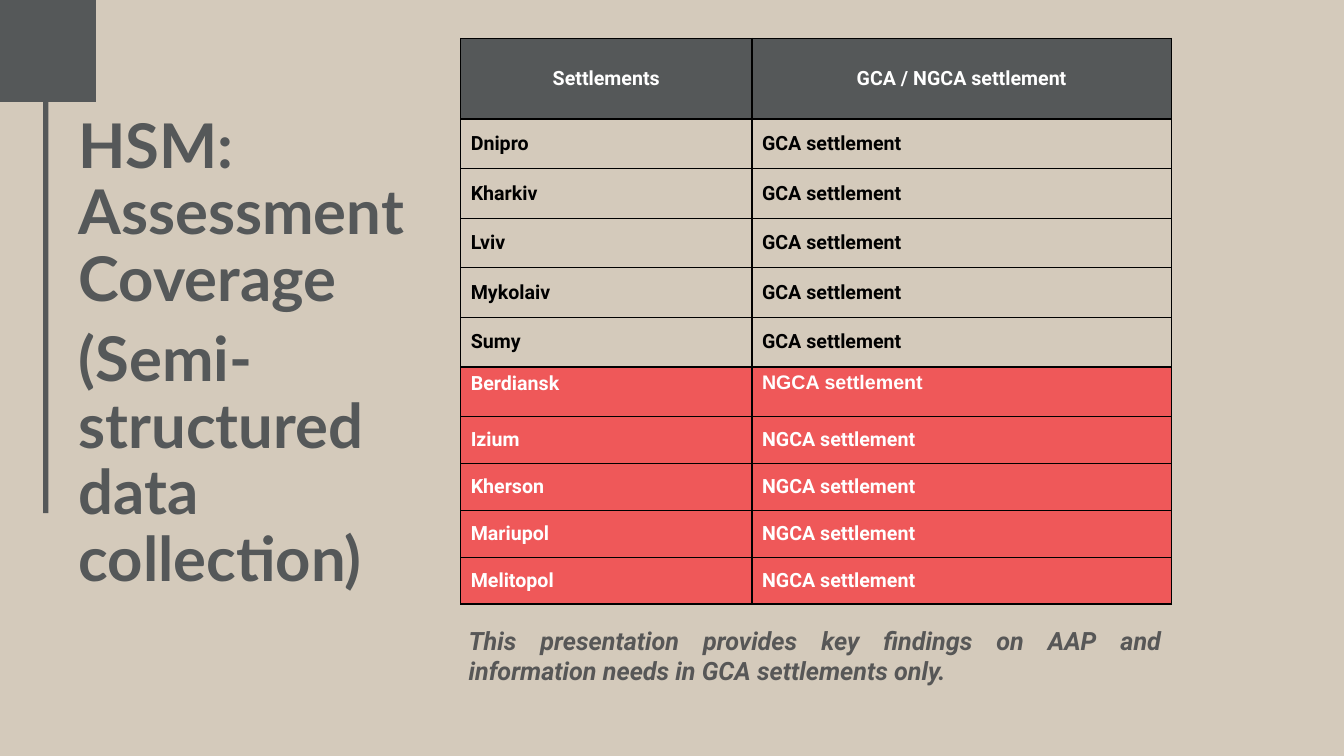
from dataclasses import dataclass

import lxml.etree
import pptx
import pptx.dml.color
import pptx.enum.shapes
import pptx.enum.text
import pptx.oxml.ns
import pptx.util

Cm = pptx.util.Cm
Pt = pptx.util.Pt
PP_ALIGN = pptx.enum.text.PP_ALIGN
MSO_ANCHOR = pptx.enum.text.MSO_ANCHOR

COLORS = {
    "sand": "D4CABB",
    "slate": "555859",
    "red": "EF5859",
    "note": "575757",
    "black": "000000",
    "white": "FFFFFF",
}


@dataclass
class Block:
    left: float
    top: float
    width: float
    height: float


@dataclass
class Style:
    size: float
    font: str
    color: str
    italic: bool = False


@dataclass
class Row:
    texts: tuple[str, str]
    height: float
    fill: str
    color: str
    align: PP_ALIGN = PP_ALIGN.LEFT
    anchor: MSO_ANCHOR = MSO_ANCHOR.MIDDLE
    fonts: tuple[str, str] = ("Roboto", "Roboto")


def rgb(name: str) -> pptx.dml.color.RGBColor:
    return pptx.dml.color.RGBColor.from_string(COLORS[name])


def add_run(p, text: str, style: Style) -> None:
    r = p.add_run()
    r.text = text
    r.font.size = Pt(style.size)
    r.font.name = style.font
    r.font.bold = True
    r.font.italic = style.italic
    r.font.color.rgb = rgb(style.color)


def add_block(s, block: Block) -> None:
    sp = s.shapes.add_shape(
        pptx.enum.shapes.MSO_SHAPE.RECTANGLE,
        Cm(block.left), Cm(block.top), Cm(block.width), Cm(block.height))
    sp.shadow.inherit = False
    sp.fill.solid()
    sp.fill.fore_color.rgb = rgb("slate")
    sp.line.fill.background()


def add_text(s, block: Block, texts: list[str], style: Style, align: PP_ALIGN,
             line_spacing: float = 1.0, gap: float = 0) -> None:
    tf = s.shapes.add_textbox(
        Cm(block.left), Cm(block.top), Cm(block.width), Cm(block.height)).text_frame
    tf.word_wrap = True
    for i, text in enumerate(texts):
        p = tf.add_paragraph() if i else tf.paragraphs[0]
        p.alignment = align
        p.line_spacing = line_spacing
        if i:
            p.space_before = Pt(gap)
        add_run(p, text, style)


def set_borders(cell, color: str, width: float) -> None:
    tc_pr = cell._tc.get_or_add_tcPr()
    qn = pptx.oxml.ns.qn
    for i, side in enumerate(("a:lnL", "a:lnR", "a:lnT", "a:lnB")):
        ln = lxml.etree.Element(qn(side), w=str(Pt(width)))
        fill = lxml.etree.SubElement(ln, qn("a:solidFill"))
        lxml.etree.SubElement(fill, qn("a:srgbClr"), val=COLORS[color])
        tc_pr.insert(i, ln)


def add_table(s, block: Block, col_widths: list[float], rows: list[Row]) -> None:
    table = s.shapes.add_table(
        len(rows), len(col_widths),
        Cm(block.left), Cm(block.top), Cm(block.width), Cm(block.height)).table
    for col, width in zip(table.columns, col_widths):
        col.width = Cm(width)
    for i, row in enumerate(rows):
        table.rows[i].height = Cm(row.height)
        for j, text in enumerate(row.texts):
            cell = table.cell(i, j)
            cell.fill.solid()
            cell.fill.fore_color.rgb = rgb(row.fill)
            cell.vertical_anchor = row.anchor
            set_borders(cell, "black", 1)
            p = cell.text_frame.paragraphs[0]
            p.alignment = row.align
            add_run(p, text, Style(14, row.fonts[j], row.color))


def main() -> None:
    prs = pptx.Presentation()
    prs.slide_width, prs.slide_height = Cm(33.87), Cm(19.05)
    s = prs.slides.add_slide(prs.slide_layouts[6])

    # Background and corner decoration
    s.background.fill.solid()
    s.background.fill.fore_color.rgb = rgb("sand")
    for block in (Block(1.09, 2.57, 0.13, 10.36), Block(0, 0, 2.42, 2.57)):
        add_block(s, block)

    # Title
    add_text(s, Block(1.73, 2.77, 9.02, 10.67),
             ["HSM: Assessment Coverage", "(Semi-structured data collection)"],
             Style(44, "Lato", "slate"), PP_ALIGN.LEFT, line_spacing=0.9, gap=10)

    # Settlement table
    rows = [Row(("Settlements", "GCA / NGCA settlement"), 2.03, "slate", "white",
                align=PP_ALIGN.CENTER)]
    rows += [Row((name, "GCA settlement"), 1.25, "sand", "black")
             for name in ("Dnipro", "Kharkiv", "Lviv", "Mykolaiv", "Sumy")]
    rows.append(Row(("Berdiansk", "NGCA settlement"), 1.25, "red", "white",
                    anchor=MSO_ANCHOR.TOP, fonts=("Roboto", "Arial")))
    rows += [Row((name, "NGCA settlement"), 1.18, "red", "white")
             for name in ("Izium", "Kherson", "Mariupol", "Melitopol")]
    add_table(s, Block(11.61, 0.97, 17.91, 14.25), [7.34, 10.57], rows)

    # Note below the table
    add_text(s, Block(11.56, 15.62, 17.96, 1.8),
             ["This presentation provides key findings on AAP and "
              "information needs in GCA settlements only."],
             Style(18, "Roboto", "note", italic=True), PP_ALIGN.JUSTIFY)

    prs.save("out.pptx")


if __name__ == "__main__":
    main()
